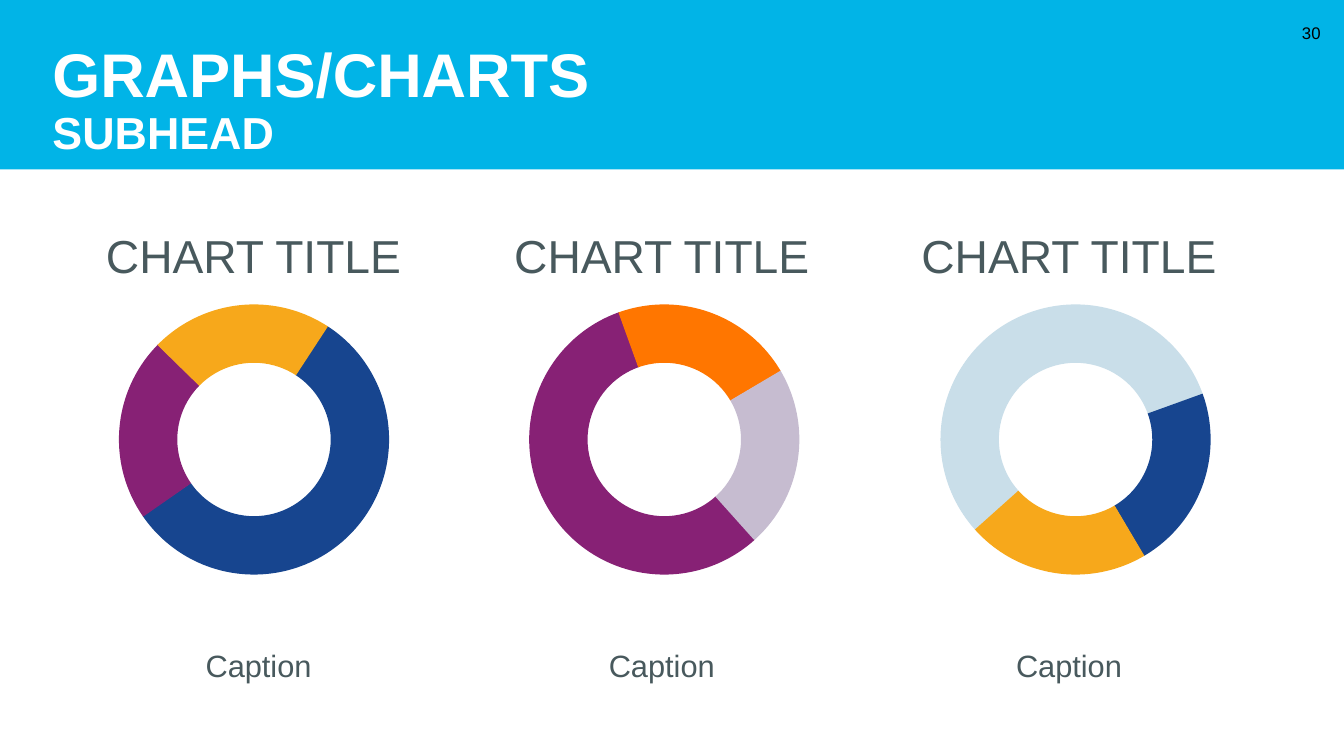
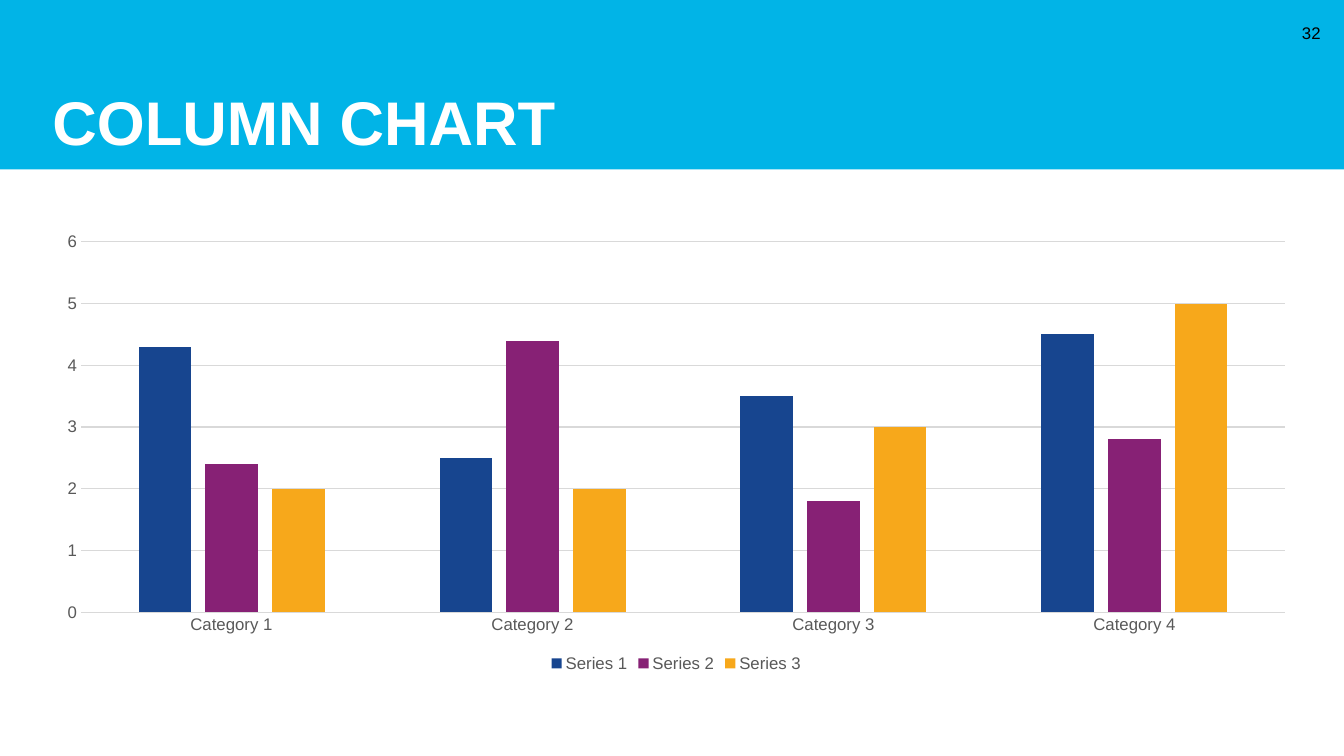
from pptx import Presentation
from pptx.chart.data import CategoryChartData
from pptx.dml.color import RGBColor
from pptx.enum.chart import XL_CHART_TYPE, XL_LEGEND_POSITION, XL_TICK_MARK
from pptx.enum.shapes import MSO_SHAPE, PP_PLACEHOLDER
from pptx.enum.text import MSO_ANCHOR, MSO_AUTO_SIZE, PP_ALIGN
from pptx.util import Inches, Pt

WHITE = RGBColor(0xFF, 0xFF, 0xFF)
BLACK = RGBColor(0x00, 0x00, 0x00)
SKY = RGBColor(0x01, 0xB4, 0xE7)
SLATE = RGBColor(0x48, 0x59, 0x5D)
BLUE = RGBColor(0x17, 0x45, 0x8F)
PURPLE = RGBColor(0x87, 0x21, 0x75)
GOLD = RGBColor(0xF7, 0xA8, 0x1B)
ORANGE = RGBColor(0xFF, 0x76, 0x00)
LILAC = RGBColor(0xC6, 0xBC, 0xD0)
PALE_BLUE = RGBColor(0xC9, 0xDE, 0xE9)
AXIS_TEXT = RGBColor(0x59, 0x59, 0x59)
GRID = RGBColor(0xD9, 0xD9, 0xD9)

FONT = "Arial"
SLIDE_W, SLIDE_H, BAND_H = 40 / 3, 7.5, 1.68
MARGIN, CONTENT_W = 0.42, 12.58
COLUMN_W, RING_SIZE = 3.69, 2.68
ARCS = [(181.69, 87.26), (87.09, 134.74), (134.64, 181.91)]
ARC_THICKNESS = 21.6 / 100
FOOTER_TYPES = (PP_PLACEHOLDER.DATE, PP_PLACEHOLDER.FOOTER, PP_PLACEHOLDER.SLIDE_NUMBER)


def box(left, top, width, height):
    """Convert a box in inches to lengths."""
    return [Inches(n) for n in (left, top, width, height)]


def style_font(font, size, color, bold=False):
    """Apply the deck font with a size and colour."""
    font.name, font.size, font.bold = FONT, Pt(size), bold
    font.color.rgb = color


def fill_shape(sp, color):
    """Give a shape a flat fill without outline or shadow."""
    sp.fill.solid()
    sp.fill.fore_color.rgb = color
    sp.line.fill.background()
    sp.shadow.inherit = False


def add_text(s, area, text, size, color, align, anchor=MSO_ANCHOR.MIDDLE):
    """Add a one-paragraph text box."""
    tf = s.shapes.add_textbox(*box(*area)).text_frame
    tf.word_wrap = True
    tf.vertical_anchor = anchor
    p = tf.paragraphs[0]
    p.text, p.alignment = text, align
    style_font(p.font, size, color)


def trim_template(prs, layout):
    """Drop the unused layouts and the footer placeholders."""
    for other in list(prs.slide_layouts):
        if other.name != layout.name:
            prs.slide_layouts.remove(other)
    for holder in (prs.slide_master, layout):
        for sp in list(holder.placeholders):
            if sp.placeholder_format.type in FOOTER_TYPES:
                sp.element.getparent().remove(sp.element)


def add_band(prs, s):
    """Place the title band on the slide master."""
    sp = s.shapes.add_shape(MSO_SHAPE.RECTANGLE, *box(0, 0, SLIDE_W, BAND_H))
    fill_shape(sp, SKY)
    prs.slide_master.shapes.element.insert(2, sp.element)


def add_header(s, title, number, subhead=None):
    """Fill the title placeholder and add the slide number."""
    sp = s.shapes.title
    sp.left, sp.top, sp.width, sp.height = box(MARGIN, 0, CONTENT_W, BAND_H)
    tf = sp.text_frame
    tf.auto_size = MSO_AUTO_SIZE.NONE
    tf.vertical_anchor = MSO_ANCHOR.BOTTOM
    tf.margin_left = tf.margin_right = tf.margin_bottom = Inches(0.1)
    tf.margin_top = 0
    p = tf.paragraphs[0]
    p.alignment, p.line_spacing = PP_ALIGN.LEFT, 0.9
    style_font(p.font, 44, WHITE, True)
    p.add_run().text = title
    if subhead:
        p.add_line_break()
        r = p.add_run()
        r.text = subhead
        r.font.size = Pt(32)
    add_text(s, (12.74, 0.13, 0.46, 0.4), str(number), 12, BLACK, PP_ALIGN.RIGHT)


def add_ring(s, left, top, size, rotation, colors):
    """Build a grouped ring of three block arcs."""
    group = s.shapes.add_group_shape()
    for (start, end), color in zip(ARCS, colors):
        sp = group.shapes.add_shape(MSO_SHAPE.BLOCK_ARC, *box(left, top, size, size))
        for i, value in enumerate((start, end, ARC_THICKNESS)):
            sp.adjustments[i] = value
        sp.rotation = rotation
        fill_shape(sp, color)


def add_ring_column(s, left, top, ring_dx, caption_dx, rotation, colors):
    """Stack a chart title, a ring and a caption."""
    add_text(s, (left, top, COLUMN_W, 0.66), "CHART TITLE", 33, SLATE,
             PP_ALIGN.CENTER, MSO_ANCHOR.TOP)
    add_ring(s, left + ring_dx, top + 0.81, RING_SIZE, rotation, colors)
    add_text(s, (left + caption_dx, top + 3.49, COLUMN_W, 1.79), "Caption", 22, SLATE,
             PP_ALIGN.CENTER)


def add_column_chart(s, area, categories, series):
    """Add a clustered column chart with a legend below."""
    data = CategoryChartData()
    data.categories = categories
    for name, values, _ in series:
        data.add_series(name, values)
    chart = s.shapes.add_chart(XL_CHART_TYPE.COLUMN_CLUSTERED, *box(*area), data).chart
    style_font(chart.font, 10, BLACK)
    chart.has_title = False
    chart.has_legend = True
    chart.legend.position = XL_LEGEND_POSITION.BOTTOM
    chart.legend.include_in_layout = False
    style_font(chart.legend.font, 12, AXIS_TEXT)

    plot = chart.plots[0]
    plot.gap_width, plot.overlap, plot.vary_by_categories = 219, -27, False
    for ser, (_, _, color) in zip(plot.series, series):
        ser.format.fill.solid()
        ser.format.fill.fore_color.rgb = color

    cat_axis, val_axis = chart.category_axis, chart.value_axis
    for axis in (cat_axis, val_axis):
        axis.major_tick_mark = axis.minor_tick_mark = XL_TICK_MARK.NONE
        style_font(axis.tick_labels.font, 12, AXIS_TEXT)
    val_axis.minimum_scale, val_axis.maximum_scale, val_axis.major_unit = 0, 6, 1
    val_axis.has_major_gridlines = True
    val_axis.format.line.fill.background()
    for line in (cat_axis.format.line, val_axis.major_gridlines.format.line):
        line.color.rgb, line.width = GRID, Pt(0.75)


def build_rings_slide(s):
    """Build the slide of three ring charts."""
    add_header(s, "GRAPHS/CHARTS", 30, "SUBHEAD")
    columns = [
        (0.67, 0.51, 0.05, 0, (BLUE, PURPLE, GOLD)),
        (4.72, 0.53, 0, 105, (PURPLE, ORANGE, LILAC)),
        (8.76, 0.57, 0, 195, (PALE_BLUE, BLUE, GOLD)),
    ]
    for left, ring_dx, caption_dx, rotation, colors in columns:
        add_ring_column(s, left, 2.21, ring_dx, caption_dx, rotation, colors)


def build_chart_slide(s):
    """Build the column chart slide."""
    add_header(s, "COLUMN CHART", 32)
    series = [
        ("Series 1", (4.3, 2.5, 3.5, 4.5), BLUE),
        ("Series 2", (2.4, 4.4, 1.8, 2.8), PURPLE),
        ("Series 3", (2, 2, 3, 5), GOLD),
    ]
    categories = [f"Category {n}" for n in range(1, 5)]
    add_column_chart(s, (MARGIN, 2.22, CONTENT_W, 4.49), categories, series)


def main():
    """Create and save the presentation."""
    prs = Presentation()
    prs.slide_width, prs.slide_height = Inches(SLIDE_W), Inches(SLIDE_H)
    layout = prs.slide_layouts.get_by_name("Title Only")
    trim_template(prs, layout)
    slides = [prs.slides.add_slide(layout) for _ in range(2)]
    add_band(prs, slides[0])
    build_rings_slide(slides[0])
    build_chart_slide(slides[1])
    prs.save("out.pptx")


if __name__ == "__main__":
    main()
